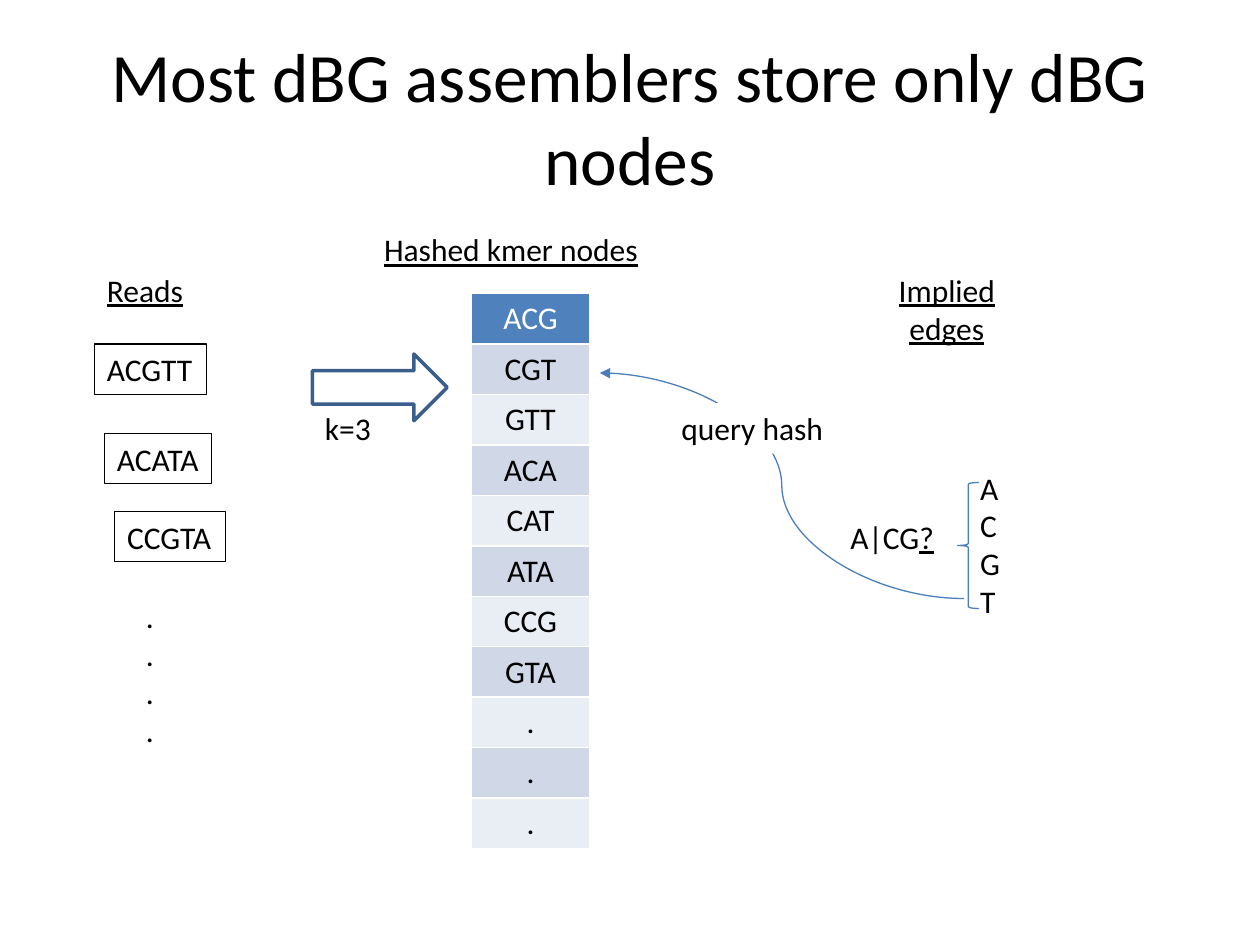
from lxml import etree
from pptx import Presentation
from pptx.dml.color import RGBColor
from pptx.enum.shapes import MSO_CONNECTOR, MSO_SHAPE
from pptx.enum.text import MSO_ANCHOR, PP_ALIGN
from pptx.oxml.ns import qn
from pptx.util import Inches, Pt

RECT, ARROW, BRACE = MSO_SHAPE.RECTANGLE, MSO_SHAPE.RIGHT_ARROW, MSO_SHAPE.LEFT_BRACE
CURVE = MSO_CONNECTOR.CURVE
LEFT, CENTER = PP_ALIGN.LEFT, PP_ALIGN.CENTER
MIDDLE = MSO_ANCHOR.MIDDLE
FONT, SIZE = "Calibri", 18
BLACK, WHITE, BLUE, NAVY = "000000", "FFFFFF", "4B7EBC", "3A5F8C"
HEADER, BANDS = "4F81BD", ("E9EDF4", "D0D8E8")
COLS, ROWS = 100, 75

prs = Presentation()
prs.slide_width, prs.slide_height = Inches(10), Inches(7.5)


def rgb(value):
    return RGBColor.from_string(value)


def place(box, x, y, w, h):
    col, row = prs.slide_width / COLS, prs.slide_height / ROWS
    return (round((box[0] + x) * col), round((box[1] + y) * row),
            round(w * col), round(h * row))


def style(p, color=BLACK, align=LEFT, size=SIZE, underline=None):
    p.alignment = align
    p.font.name, p.font.size = FONT, Pt(size)
    p.font.color.rgb = rgb(color)
    p.font.underline = underline


def write(sp, text, align=LEFT, underline=None, wrap=False):
    tf = sp.text_frame
    tf.word_wrap = wrap
    tf.text = text
    for p in tf.paragraphs:
        style(p, align=align, underline=underline)
    return tf


def label(s, area, text, **options):
    return write(s.shapes.add_textbox(*area), text, **options)


def shape(s, kind, area, line=None, width=0.75, fill=None):
    sp = s.shapes.add_shape(kind, *area)
    sp.shadow.inherit = False
    if fill:
        sp.fill.solid()
        sp.fill.fore_color.rgb = rgb(fill)
    else:
        sp.fill.background()
    if line:
        sp.line.color.rgb = rgb(line)
        sp.line.width = Pt(width)
    else:
        sp.line.fill.background()
    return sp


def add_title(s, box, text):
    sp = s.shapes.title
    sp.left, sp.top, sp.width, sp.height = place(box, 0, 0, box[2], box[3])
    sp.text_frame.text = text
    sp.text_frame.vertical_anchor = MIDDLE
    style(sp.text_frame.paragraphs[0], align=CENTER, size=39.6)


def add_reads(s, box):
    label(s, place(box, 0, 0, 8.1, 4), "Reads", underline=True)
    reads = (("ACGTT", 0, 6.3, 8.9), ("ACATA", 0.8, 13.4, 8.5), ("CCGTA", 1.6, 19.6, 8.8))
    for text, x, y, w in reads:
        write(shape(s, RECT, place(box, x, y, w, 4), BLACK), text)
    label(s, place(box, 3.1, 25.9, 2.7, 13.1), "\n".join("...."))


def add_hashing(s, box):
    shape(s, ARROW, place(box, 0, 0, 10.7, 5.3), NAVY, 2)
    label(s, place(box, 0, 3.9, 5.7, 4), "k=3")


def add_nodes(s, box, kmers):
    label(s, place(box, 0, 0, box[2], 4), "Hashed kmer nodes", underline=True)
    area = place(box, 7.9, 5.5, 9.4, 4 * len(kmers))
    table = s.shapes.add_table(len(kmers), 1, *area).table
    for i, kmer in enumerate(kmers):
        cell = table.cell(i, 0)
        cell.text = kmer
        cell.fill.solid()
        cell.fill.fore_color.rgb = rgb(BANDS[i % 2] if i else HEADER)
        style(cell.text_frame.paragraphs[0], BLACK if i else WHITE, CENTER)


def add_query(s, box):
    x, y, w, h = place(box, 0, 0, box[2], box[3])
    line = s.shapes.add_connector(CURVE, x, y, x + w, y + h)
    line.line.color.rgb = rgb(BLUE)
    line.line.width = Pt(0.75)
    etree.SubElement(line.line._get_or_add_ln(), qn("a:headEnd"), type="triangle")
    etree.SubElement(line._element.spPr, qn("a:effectLst"))
    write(shape(s, RECT, place(box, 5.5, 2.4, 13.4, 4), fill=WHITE), "query hash")


def add_edges(s, box):
    label(s, place(box, 0.8, 0, 15.7, 7.1), "Implied edges",
          align=CENTER, underline=True, wrap=True)
    tf = label(s, place(box, 0, 19.6, 8.7, 4), "A|CG")
    p = tf.paragraphs[0]
    r = p.add_run()
    r.text = "?"
    r.font.underline = True
    label(s, place(box, 10.3, 15.7, 3.6, 13.1), "\n".join("ACGT"))
    shape(s, BRACE, place(box, 9.5, 17.3, 1.7, 10), BLUE)


def main():
    s = prs.slides.add_slide(prs.slide_layouts[5])
    add_title(s, (5, 3, 90, 12.5), "Most dBG assemblers store only dBG nodes")
    add_reads(s, (7.5, 21, 10.4, 39))
    add_hashing(s, (24.8, 28.1, 10.7, 8))
    add_nodes(s, (29.5, 17.8, 23, 49.5),
              "ACG CGT GTT ACA CAT ATA CCG GTA . . .".split())
    add_query(s, (47.6, 29.6, 28.9, 17.9))
    add_edges(s, (66.5, 21, 16.5, 29))
    prs.save("out.pptx")


if __name__ == "__main__":
    main()
